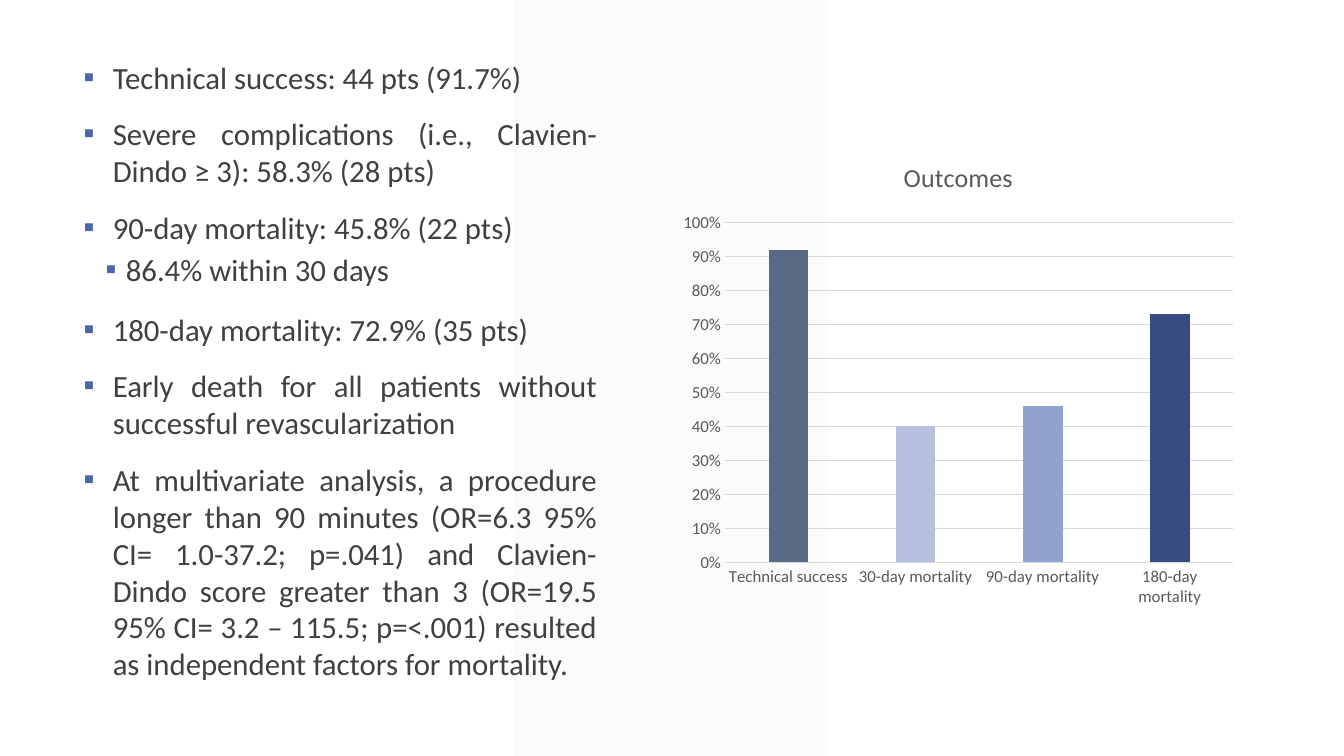
from dataclasses import dataclass

from lxml.etree import SubElement
from pptx import Presentation
from pptx.chart.data import CategoryChartData
from pptx.dml.color import RGBColor
from pptx.enum.chart import XL_CHART_TYPE, XL_TICK_MARK
from pptx.enum.shapes import MSO_SHAPE
from pptx.enum.text import MSO_ANCHOR, PP_ALIGN
from pptx.oxml.ns import qn
from pptx.util import Inches, Pt

# Level and wording of each finding
FINDINGS = [
    (0, "Technical success: 44 pts (91.7%)"),
    (0, "Severe complications (i.e., Clavien-Dindo ≥ 3): 58.3% (28 pts)"),
    (0, "90-day mortality: 45.8% (22 pts)"),
    (1, "86.4% within 30 days"),
    (0, "180-day mortality: 72.9% (35 pts)"),
    (0, "Early death for all patients without successful revascularization"),
    (0, "At multivariate analysis, a procedure longer than 90 minutes "
        "(OR=6.3 95% CI= 1.0-37.2; p=.041) and Clavien-Dindo score greater "
        "than 3 (OR=19.5 95% CI= 3.2 – 115.5; p=<.001) resulted as "
        "independent factors for mortality."),
]
CHART_TITLE = "Outcomes"
# Category, share of patients, bar colour
OUTCOMES = [
    ("Technical success", 0.92, "596A85"),
    ("30-day mortality", 0.4, "B5C1DF"),
    ("90-day mortality", 0.46, "90A2CF"),
    ("180-day mortality", 0.73, "384C81"),
]
# Left indent, hanging indent (inches), space before, space after (points)
LEVELS = [(0.29, 0.29, 12, 2), (0.42, 0.2, 2, 4)]


@dataclass(frozen=True)
class Theme:
    font: str = "Calibri"
    body: str = "404040"
    bullet: str = "4A66AC"
    band: str = "F2F2F2"
    band_opacity: int = 30
    label: str = "595959"
    grid: str = "D9D9D9"
    body_size: float = 22
    title_size: float = 18.6
    axis_size: float = 12
    line_width: float = 0.75


THEME = Theme()
WIDTH, HEIGHT = 13.33, 7.5
BAND = (5.1, 0, 3.12, HEIGHT)
TEXT = (0.73, 0.53, 5.29, 6.51)
CHART = (WIDTH / 2, 1.39, 5.68, 4.72)


def box(area):
    return [Inches(v) for v in area]


def style(font, size, color):
    font.name = THEME.font
    font.size = Pt(size)
    font.bold = False
    font.color.rgb = RGBColor.from_string(color)


def rule(line):
    line.color.rgb = RGBColor.from_string(THEME.grid)
    line.width = Pt(THEME.line_width)


def add_band(s):
    sp = s.shapes.add_shape(MSO_SHAPE.PARALLELOGRAM, *box(BAND))
    sp.adjustments[0] = 0
    sp.shadow.inherit = False
    sp.line.fill.background()
    sp.fill.solid()
    sp.fill.fore_color.rgb = RGBColor.from_string(THEME.band)
    color = sp.element.spPr.find(qn("a:solidFill")).find(qn("a:srgbClr"))
    SubElement(color, qn("a:alpha"), val=str(THEME.band_opacity * 1000))


def set_bullet(p, left, hang):
    pPr = p._p.get_or_add_pPr()
    pPr.set("marL", str(Inches(left)))
    pPr.set("indent", str(-Inches(hang)))
    color = SubElement(pPr, qn("a:buClr"))
    SubElement(color, qn("a:srgbClr"), val=THEME.bullet)
    SubElement(pPr, qn("a:buFont"), typeface=THEME.font)
    SubElement(pPr, qn("a:buChar"), char="▪")


def add_findings(s):
    tf = s.shapes.add_textbox(*box(TEXT)).text_frame
    tf.word_wrap = True
    tf.vertical_anchor = MSO_ANCHOR.TOP
    for i, (level, text) in enumerate(FINDINGS):
        p = tf.add_paragraph() if i else tf.paragraphs[0]
        left, hang, before, after = LEVELS[level]
        p.level = level
        p.alignment = PP_ALIGN.JUSTIFY
        p.space_before, p.space_after = Pt(before), Pt(after)
        set_bullet(p, left, hang)
        r = p.add_run()
        r.text = text
        style(r.font, THEME.body_size, THEME.body)


def add_outcomes_chart(s):
    names, shares, colors = zip(*OUTCOMES)
    data = CategoryChartData(number_format="0%")
    data.categories = names
    data.add_series(CHART_TITLE, shares)
    chart = s.shapes.add_chart(
        XL_CHART_TYPE.COLUMN_CLUSTERED, *box(CHART), data).chart
    style(chart.font, THEME.axis_size, THEME.label)
    chart.has_legend = False
    chart.has_title = True
    r = chart.chart_title.text_frame.paragraphs[0].add_run()
    r.text = CHART_TITLE
    style(r.font, THEME.title_size, THEME.label)

    plot = chart.plots[0]
    plot.vary_by_categories = False
    plot.gap_width, plot.overlap = 219, -27
    for i, color in enumerate(colors):
        fill = plot.series[0].points[i].format.fill
        fill.solid()
        fill.fore_color.rgb = RGBColor.from_string(color)

    for axis in (chart.category_axis, chart.value_axis):
        axis.major_tick_mark = axis.minor_tick_mark = XL_TICK_MARK.NONE
        style(axis.tick_labels.font, THEME.axis_size, THEME.label)
    rule(chart.category_axis.format.line)
    values = chart.value_axis
    values.minimum_scale, values.maximum_scale, values.major_unit = 0, 1, 0.1
    values.tick_labels.number_format = "0%"
    values.tick_labels.number_format_is_linked = False
    values.format.line.fill.background()
    values.has_major_gridlines = True
    rule(values.major_gridlines.format.line)


def main():
    prs = Presentation()
    prs.slide_width, prs.slide_height = Inches(WIDTH), Inches(HEIGHT)
    s = prs.slides.add_slide(prs.slide_layouts[6])
    add_band(s)
    add_findings(s)
    add_outcomes_chart(s)
    prs.save("out.pptx")


if __name__ == "__main__":
    main()
